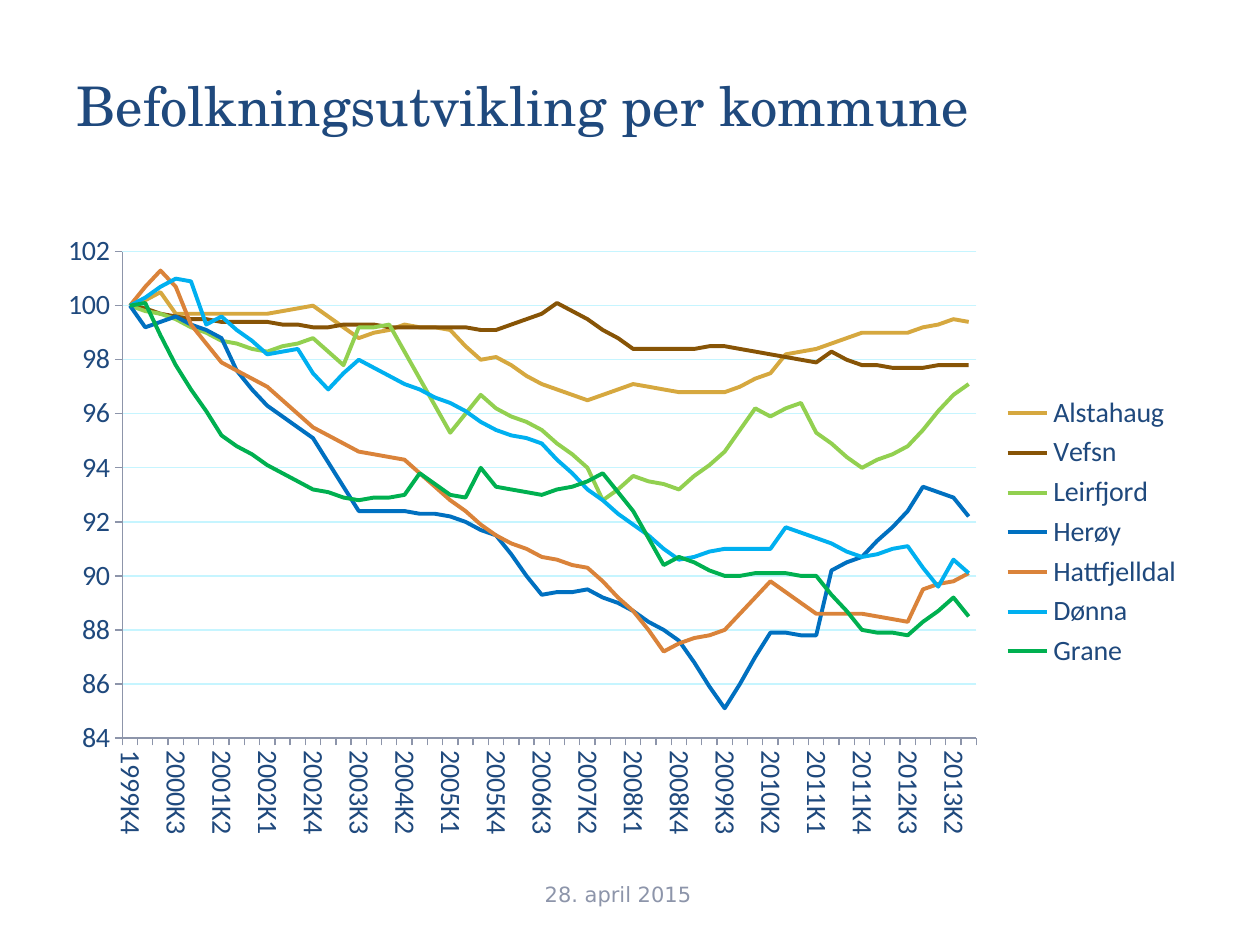
"""Build a slide with a line chart of population by municipality."""
from itertools import pairwise
from lxml.etree import SubElement
from pptx import Presentation
from pptx.chart.data import CategoryChartData as Data
from pptx.dml.color import RGBColor
from pptx.enum.chart import XL_CHART_TYPE as Kind, XL_LEGEND_POSITION as Side
from pptx.enum.chart import XL_TICK_LABEL_POSITION as Place, XL_TICK_MARK as Tick
from pptx.enum.text import MSO_ANCHOR as Anchor, PP_ALIGN as Align
from pptx.oxml import parse_xml
from pptx.oxml.ns import nsdecls, qn
from pptx.util import Pt

NAVY = RGBColor.from_string("1F497D")
GRAY = RGBColor.from_string("8D95AA")
ICE = RGBColor.from_string("C6F5FF")
GOLD = RGBColor.from_string("D6A83F")
BROWN = RGBColor.from_string("875406")
LIME = RGBColor.from_string("92D050")
BLUE = RGBColor.from_string("0070C0")
RUST = RGBColor.from_string("DA833A")
SKY = RGBColor.from_string("00B0F0")
GREEN = RGBColor.from_string("00B050")

TEXTS = [
    ("Befolkningsutvikling per kommune", (36.72, 37.44, 648, 90),
     Align.LEFT, Anchor.TOP,
     {"name": "TeX Gyre Schola", "size": Pt(31.2)}, NAVY),
    ("28. april 2015", (269.28, 496.8, 167.76, 28.8),
     Align.CENTER, Anchor.MIDDLE,
     {"name": "DejaVu Sans", "size": Pt(12)}, GRAY),
]
CHART = (23.76, 126, 659.52, 356.4)
PLOT = {"x": 0.07, "y": 0.05, "w": 0.74, "h": 0.78}
QUARTERS = [f"{1999 + n // 4}K{n % 4 + 1}" for n in range(3, 59)]
STEP = 3
SERIES = [
    ("Alstahaug", GOLD,
     [100, 99.7, 99.7, 99.7, 100, 98.8, 99.3, 99.1, 98.1, 97.1,
      96.5, 97.1, 96.8, 96.8, 97.5, 98.4, 99, 99, 99.5, 99.4],
     {2: 100.5, 23: 98, 43: 98.2}),
    ("Vefsn", BROWN,
     [100, 99.6, 99.4, 99.4, 99.2, 99.3, 99.2, 99.2, 99.1, 99.7,
      99.5, 98.4, 98.4, 98.5, 98.2, 97.9, 97.8, 97.7, 97.8, 97.8],
     {28: 100.1, 46: 98.3}),
    ("Leirfjord", LIME,
     [100, 99.5, 98.7, 98.3, 98.8, 99.2, 98.3, 95.3, 96.2, 95.4,
      94, 93.7, 93.2, 94.6, 95.9, 95.3, 94, 94.8, 96.7, 97.1],
     {14: 97.8, 17: 99.3, 23: 96.7, 31: 92.8, 41: 96.2, 44: 96.4}),
    ("Herøy", BLUE,
     [100, 99.6, 98.8, 96.3, 95.1, 92.4, 92.4, 92.2, 91.5, 89.3,
      89.5, 88.7, 87.6, 85.1, 87.9, 87.8, 90.7, 92.4, 92.9, 92.2],
     {1: 99.2, 7: 97.6, 46: 90.2, 52: 93.3}),
    ("Hattfjelldal", RUST,
     [100, 100.7, 97.9, 97, 95.5, 94.6, 94.3, 92.8, 91.5, 90.7,
      90.3, 88.7, 87.5, 88, 89.8, 88.6, 88.6, 88.3, 89.8, 90.1],
     {2: 101.3, 4: 99.3, 35: 87.2, 52: 89.5}),
    ("Dønna", SKY,
     [100, 101, 99.6, 98.2, 97.5, 98, 97.1, 96.4, 95.4, 94.9,
      93.2, 91.9, 90.6, 91, 91, 91.4, 90.7, 91.1, 90.6, 90.1],
     {4: 100.9, 5: 99.3, 11: 98.4, 13: 96.9, 43: 91.8, 53: 89.6}),
    ("Grane", GREEN,
     [100, 97.8, 95.2, 94.1, 93.2, 92.8, 93, 93, 93.3, 93,
      93.5, 92.4, 90.7, 90, 90.1, 90, 88, 87.8, 89.2, 88.5],
     {1: 100.1, 19: 93.8, 22: 92.9, 23: 94, 31: 93.8, 35: 90.4}),
]
FONT = {"name": "Calibri", "size": Pt(16)}
SCALE = {"minimum_scale": 84, "maximum_scale": 102, "major_unit": 2,
         "has_major_gridlines": True}
TICKS = {"major_tick_mark": Tick.OUTSIDE, "minor_tick_mark": Tick.NONE}


def apply(item, vals):
    for key, val in vals.items():
        setattr(item, key, val)


def ink(line, color, width):
    line.color.rgb = color
    line.width = Pt(width)


def fill_in(vals, peaks):
    last = len(QUARTERS) - 1
    knots = {min(n * STEP, last): val for n, val in enumerate(vals)} | peaks
    out = [vals[0]]
    for (x, a), (end, b) in pairwise(sorted(knots.items())):
        gap = end - x
        out += [round(a + (b - a) * n / gap, 1) for n in range(1, gap + 1)]
    return out


def add_text(slide, text, box, align, anchor, font, color):
    frame = slide.shapes.add_textbox(*map(Pt, box)).text_frame
    apply(frame, {"word_wrap": True, "vertical_anchor": anchor})
    para = frame.paragraphs[0]
    apply(para, {"text": text, "alignment": align})
    apply(para.font, font)
    para.font.color.rgb = color


def set_plot(chart):
    area = chart._chartSpace.find(".//" + qn("c:plotArea"))
    for old in area.findall(qn("c:layout")):
        area.remove(old)
    layout = parse_xml(f"<c:layout {nsdecls('c')}/>")
    area.insert(0, layout)
    manual = SubElement(layout, qn("c:manualLayout"))
    parts = {"layoutTarget": "inner", "xMode": "edge", "yMode": "edge", **PLOT}
    for key, val in parts.items():
        SubElement(manual, qn("c:" + key)).set("val", str(val))


def turn_labels(axis):
    root = axis._element
    root.find(qn("c:txPr")).find(qn("a:bodyPr")).set("rot", "5400000")
    skip = parse_xml(f'<c:tickLblSkip {nsdecls("c")} val="{STEP}"/>')
    root.find(qn("c:noMultiLvlLbl")).addprevious(skip)


def add_lines(slide):
    data = Data(number_format="0.0")
    data.categories = QUARTERS
    for name, _, vals, peaks in SERIES:
        data.add_series(name, fill_in(vals, peaks))
    chart = slide.shapes.add_chart(Kind.LINE, *map(Pt, CHART), data).chart
    apply(chart, {"has_title": False, "has_legend": True})
    apply(chart.legend, {"position": Side.RIGHT, "include_in_layout": False})
    cats, vals = chart.category_axis, chart.value_axis
    apply(vals, SCALE)
    cats.tick_label_position = Place.LOW
    apply(vals.tick_labels, {"number_format": "0", "number_format_is_linked": False})
    ink(vals.major_gridlines.format.line, ICE, 0.75)
    for axis in (cats, vals):
        apply(axis, TICKS)
        ink(axis.format.line, GRAY, 0.75)
    for part in (chart, chart.legend, cats.tick_labels, vals.tick_labels):
        apply(part.font, FONT)
        part.font.color.rgb = NAVY
    chart.plots[0].vary_by_categories = False
    for line, (_, color, *_) in zip(chart.plots[0].series, SERIES):
        line.smooth = False
        ink(line.format.line, color, 2.25)
    turn_labels(cats)
    set_plot(chart)


def main():
    deck = Presentation()
    apply(deck, {"slide_width": Pt(720), "slide_height": Pt(540)})
    slide = deck.slides.add_slide(deck.slide_layouts[6])
    for item in TEXTS:
        add_text(slide, *item)
    add_lines(slide)
    deck.save("out.pptx")


if __name__ == "__main__":
    main()
